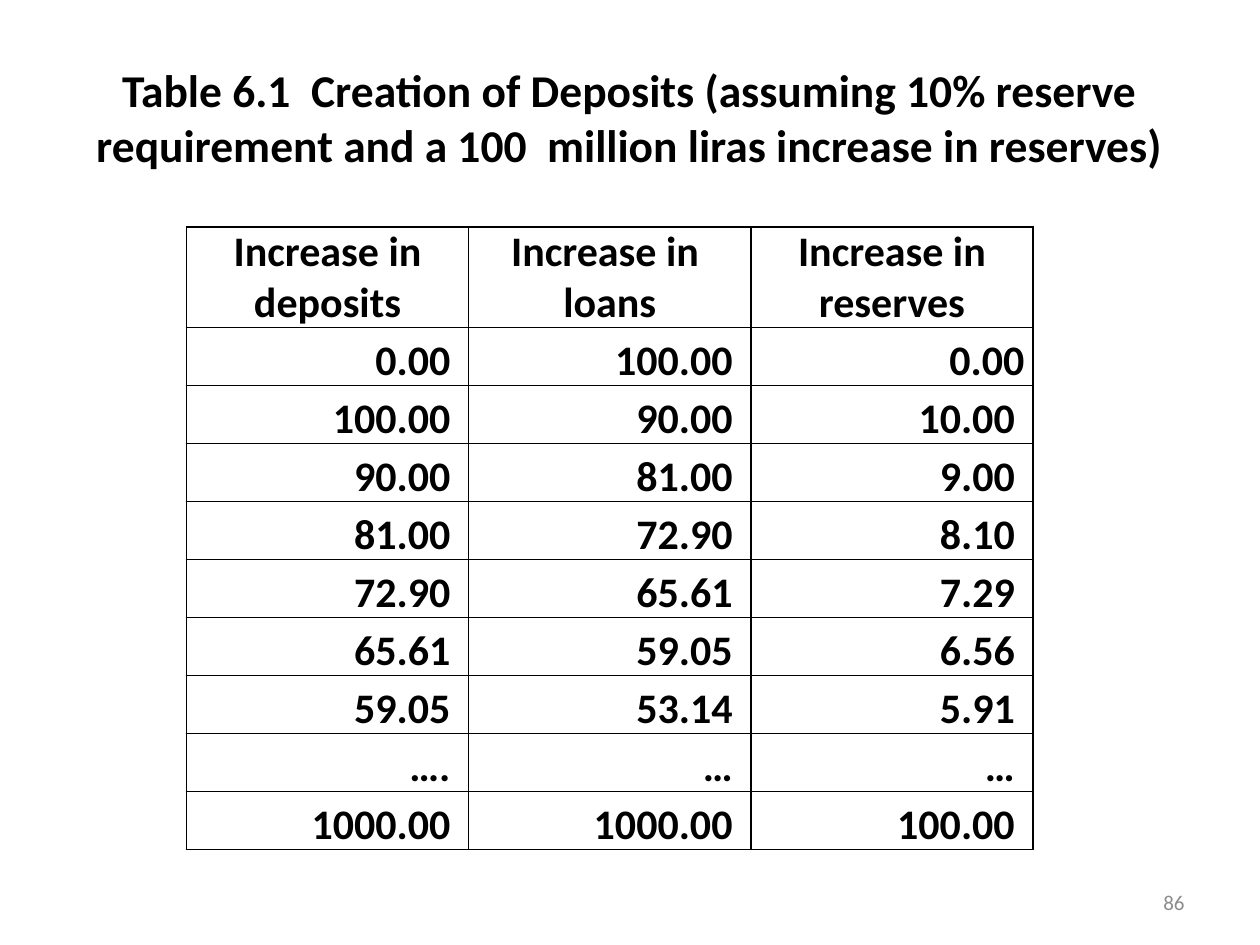
from dataclasses import dataclass
from itertools import product

from lxml.etree import SubElement
from pptx import Presentation
from pptx.dml.color import RGBColor
from pptx.enum.text import MSO_ANCHOR, MSO_AUTO_SIZE, PP_ALIGN
from pptx.oxml.ns import qn
from pptx.util import Inches, Pt


@dataclass(frozen=True)
class Theme:
    font: str = "Calibri"
    ink: str = "000000"
    gray: str = "8C8C8C"
    title: int = 26
    cell: int = 24
    note: int = 12
    rule: int = 1


THEME = Theme()
WIDE, HIGH = Inches(10), Inches(7.5)

TITLE = ("Table 6.1  Creation of Deposits (assuming 10% reserve "
         "requirement and a 100  million liras increase in reserves)")
# Figures end in a space that sets them off from the cell's right edge.
ROWS = [
    ("Increase in deposits", "Increase in \nloans", "Increase in reserves"),
    ("0.00 ", "100.00 ", "0.00"),
    ("100.00 ", "90.00 ", "10.00 "),
    ("90.00 ", "81.00 ", "9.00 "),
    ("81.00 ", "72.90 ", "8.10 "),
    ("72.90 ", "65.61 ", "7.29 "),
    ("65.61 ", "59.05 ", "6.56 "),
    ("59.05 ", "53.14 ", "5.91 "),
    ("…. ", "… ", "… "),
    ("1000.00 ", "1000.00 ", "100.00 "),
]


def area(left, top, wide, high):
    """Turn shares of the slide into a box of lengths."""
    return (int(left * WIDE), int(top * HIGH),
            int(wide * WIDE), int(high * HIGH))


def write(frame, text, size, color, align, bold=False, space=None):
    frame.text = text
    for para in frame.paragraphs:
        para.alignment = align
        if space:
            para.line_spacing = space
        for run in para.runs:
            font = run.font
            font.name, font.size, font.bold = THEME.font, Pt(size), bold
            font.color.rgb = RGBColor.from_string(color)


def frame_cell(cell):
    """Draw a thin line on all four sides of a cell."""
    props = cell._tc.get_or_add_tcPr()
    for side in ("lnL", "lnR", "lnT", "lnB"):
        line = SubElement(props, qn(f"a:{side}"), w=str(Pt(THEME.rule)))
        fill = SubElement(line, qn("a:solidFill"))
        SubElement(fill, qn("a:srgbClr"), val=THEME.ink)


def add_title(slide, box):
    title = slide.shapes.title
    title.left, title.top, title.width, title.height = box
    frame = title.text_frame
    frame.word_wrap = True
    frame.auto_size = MSO_AUTO_SIZE.NONE
    frame.vertical_anchor = MSO_ANCHOR.MIDDLE
    write(frame, TITLE, THEME.title, THEME.ink, PP_ALIGN.CENTER, bold=True)


def add_grid(slide, box):
    """Place the table: equal columns, a taller head, equal body rows."""
    left, top, wide, high = box
    count, cols = len(ROWS), len(ROWS[0])
    table = slide.shapes.add_table(count, cols, *box).table
    table.first_row = table.horz_banding = False
    head = int(high * 0.14)
    for col in table.columns:
        col.width = wide // cols
    for num, row in enumerate(table.rows):
        row.height = (high - head) // (count - 1) if num else head

    for num, col in product(range(count), range(cols)):
        cell = table.cell(num, col)
        cell.margin_left = cell.margin_right = Inches(0.07)
        cell.margin_top = cell.margin_bottom = 0
        frame_cell(cell)
        cell.fill.background()
        write(cell.text_frame, ROWS[num][col], THEME.cell, THEME.ink,
              PP_ALIGN.RIGHT if num else PP_ALIGN.CENTER,
              bold=True, space=1.15 if num else None)


def add_number(slide, box):
    frame = slide.shapes.add_textbox(*box).text_frame
    frame.word_wrap = True
    frame.vertical_anchor = MSO_ANCHOR.MIDDLE
    write(frame, "86", THEME.note, THEME.gray, PP_ALIGN.RIGHT)


def main():
    deck = Presentation()
    deck.slide_width, deck.slide_height = WIDE, HIGH
    slide = deck.slides.add_slide(deck.slide_layouts.get_by_name("Title Only"))
    add_title(slide, area(0.05, 0.04, 0.9, 1 / 6))
    add_number(slide, area(0.72, 0.93, 0.23, 0.05))
    add_grid(slide, area(0.148, 0.24, 0.672, 0.627))
    deck.save("out.pptx")


if __name__ == "__main__":
    main()
